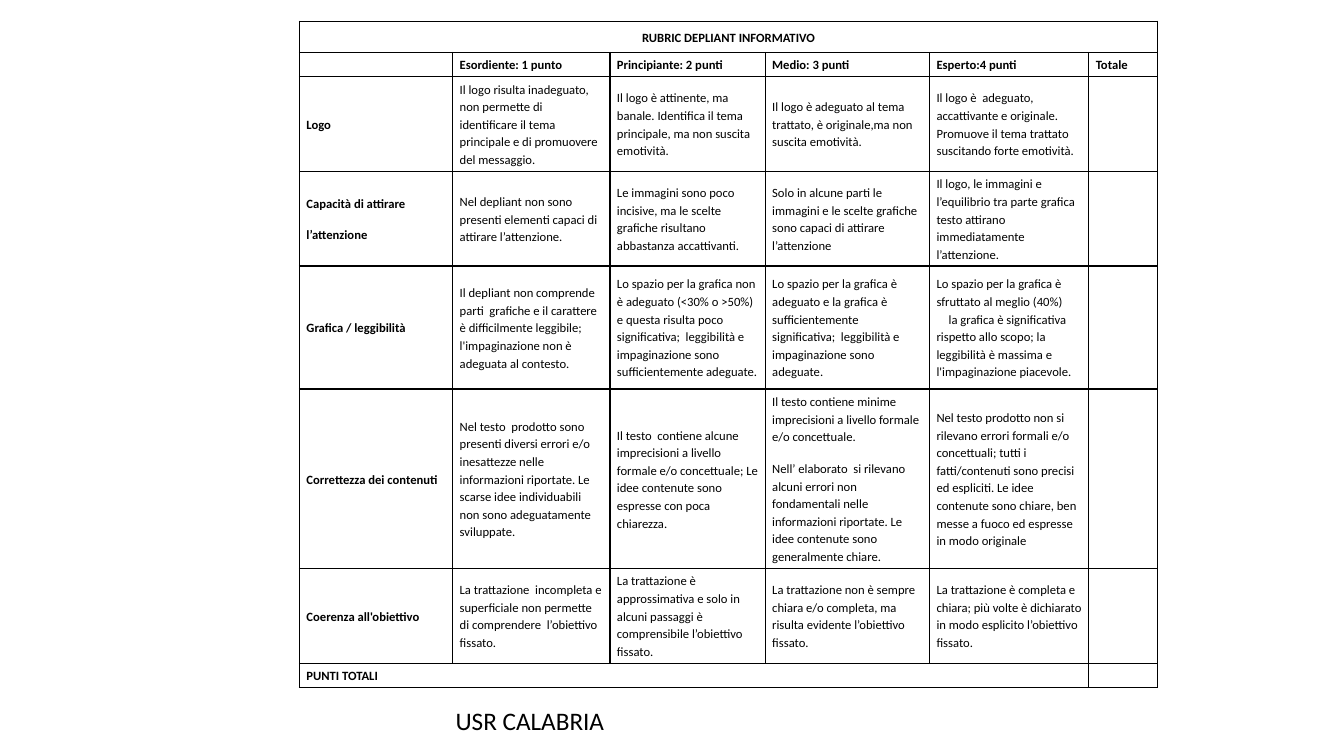
"""Builds the assessment rubric slide for an informative leaflet."""
from dataclasses import dataclass

from lxml import etree
from pptx import Presentation
from pptx.dml.color import RGBColor
from pptx.enum.text import MSO_ANCHOR, PP_ALIGN
from pptx.oxml.ns import qn
from pptx.util import Inches, Pt

MIDDLE = MSO_ANCHOR.MIDDLE
CENTER = PP_ALIGN.CENTER
BLACK = RGBColor(0, 0, 0)
FONT = "Calibri"
RUBRIC_SIZE = Pt(9)
BORDER_WIDTH = Pt(1)
BORDER_SIDES = ("a:lnL", "a:lnR", "a:lnT", "a:lnB")
COLUMN_WIDTHS = (1.52, 1.56, 1.54, 1.63, 1.58, 0.68)
TITLE_HEIGHT = 0.31
SINGLE_LINE_HEIGHT = 0.24


@dataclass(frozen=True)
class Passage:
    """One paragraph of a cell."""
    text: str
    indent: float = 0
    space_after: float = 10


@dataclass(frozen=True)
class Criterion:
    """One assessed aspect with its description at each level."""
    label: tuple[Passage, ...]
    levels: tuple[tuple[Passage, ...], ...]
    height: float


def passages(*texts: str) -> tuple[Passage, ...]:
    """Turn plain texts into regular paragraphs."""
    return tuple(Passage(text) for text in texts)


HEADINGS = ("", "Esordiente: 1 punto", "Principiante: 2 punti", "Medio: 3 punti",
            "Esperto:4 punti", "Totale")

CRITERIA = (
    Criterion(passages("Logo"), (
        passages("Il logo risulta inadeguato, non permette di identificare il tema "
                 "principale e di promuovere del messaggio."),
        passages("Il logo è attinente, ma banale. Identifica il tema principale, "
                 "ma non suscita emotività."),
        passages("Il logo è adeguato al tema trattato, è originale,ma non suscita emotività."),
        passages("Il logo è  adeguato, accattivante e originale. Promuove il tema "
                 "trattato suscitando forte emotività."),
    ), 0.94),
    Criterion(passages("Capacità di attirare", "l’attenzione"), (
        passages("Nel depliant non sono presenti elementi capaci di attirare l’attenzione."),
        passages("Le immagini sono poco incisive, ma le scelte grafiche risultano "
                 "abbastanza accattivanti."),
        passages("Solo in alcune parti le immagini e le scelte grafiche sono capaci "
                 "di attirare l’attenzione"),
        passages("Il logo, le immagini e l’equilibrio tra parte grafica testo attirano "
                 "immediatamente l’attenzione."),
    ), 0.94),
    Criterion(passages("Grafica / leggibilità"), (
        passages("Il depliant non comprende parti  grafiche e il carattere è difficilmente "
                 "leggibile; l'impaginazione non è adeguata al contesto."),
        passages("Lo spazio per la grafica non è adeguato (<30% o >50%) e questa risulta "
                 "poco significativa;  leggibilità e impaginazione sono "
                 "sufficientemente adeguate."),
        passages("Lo spazio per la grafica è adeguato e la grafica è sufficientemente "
                 "significativa;  leggibilità e impaginazione sono adeguate."),
        (Passage("Lo spazio per la grafica è sfruttato al meglio (40%)", space_after=0),
         Passage("la grafica è significativa rispetto allo scopo; la leggibilità è massima "
                 "e l'impaginazione piacevole.", indent=0.12)),
    ), 1.22),
    Criterion(passages("Correttezza dei contenuti"), (
        passages("Nel testo  prodotto sono presenti diversi errori e/o inesattezze nelle "
                 "informazioni riportate. Le scarse idee individuabili non sono "
                 "adeguatamente sviluppate."),
        passages("Il testo  contiene alcune imprecisioni a livello formale e/o concettuale; "
                 "Le idee contenute sono espresse con poca chiarezza."),
        passages("Il testo contiene minime imprecisioni a livello formale e/o concettuale.",
                 "Nell’ elaborato  si rilevano alcuni errori non fondamentali nelle "
                 "informazioni riportate. Le idee contenute sono generalmente chiare."),
        passages("Nel testo prodotto non si rilevano errori formali e/o concettuali; tutti i "
                 "fatti/contenuti sono precisi ed espliciti. Le idee contenute sono chiare, "
                 "ben messe a fuoco ed espresse in modo originale"),
    ), 1.78),
    Criterion(passages("Coerenza all'obiettivo"), (
        passages("La trattazione  incompleta e superficiale non permette di comprendere  "
                 "l’obiettivo fissato."),
        passages("La trattazione è approssimativa e solo in alcuni passaggi è comprensibile "
                 "l’obiettivo fissato."),
        passages("La trattazione non è sempre chiara e/o completa, ma risulta evidente "
                 "l’obiettivo fissato."),
        passages("La trattazione è completa e chiara; più volte è dichiarato in modo "
                 "esplicito l’obiettivo fissato."),
    ), 0.94),
)


def format_run(run, size: int, bold: bool) -> None:
    """Apply the slide's typeface to a run."""
    run.font.name = FONT
    run.font.size = size
    run.font.bold = bold
    run.font.color.rgb = BLACK


def draw_borders(cell) -> None:
    """Give a cell a solid line on every side."""
    properties = cell._tc.get_or_add_tcPr()
    for side in BORDER_SIDES:
        line = etree.SubElement(properties, qn(side), w=str(BORDER_WIDTH))
        fill = etree.SubElement(line, qn("a:solidFill"))
        etree.SubElement(fill, qn("a:srgbClr"), val=str(BLACK))


def fill_cell(cell, content: tuple[Passage, ...], bold: bool) -> None:
    """Write a cell's paragraphs and set its frame."""
    draw_borders(cell)
    cell.fill.background()
    cell.vertical_anchor = MIDDLE
    cell.margin_left = cell.margin_right = Inches(0.07)
    cell.margin_top = cell.margin_bottom = Inches(0.03)
    cell.text_frame.text = "\n".join(passage.text for passage in content)
    for paragraph, passage in zip(cell.text_frame.paragraphs, content):
        paragraph.line_spacing = 1.15
        paragraph.space_after = Pt(passage.space_after)
        if passage.indent:
            paragraph._p.get_or_add_pPr().set("indent", str(Inches(passage.indent)))
        for run in paragraph.runs:
            format_run(run, RUBRIC_SIZE, bold)
        etree.SubElement(paragraph._p, qn("a:endParaRPr"), sz=str(int(RUBRIC_SIZE.pt * 100)))


def draw_rubric(slide) -> None:
    """Draw the rubric table."""
    empty = passages("")
    blanks = len(COLUMN_WIDTHS) - 1
    rows = [
        (passages("RUBRIC DEPLIANT INFORMATIVO"), *[empty] * blanks),
        tuple(passages(heading) for heading in HEADINGS),
        *((criterion.label, *criterion.levels, empty) for criterion in CRITERIA),
        (passages("PUNTI TOTALI"), *[empty] * blanks),
    ]
    heights = [TITLE_HEIGHT, SINGLE_LINE_HEIGHT,
               *(criterion.height for criterion in CRITERIA), SINGLE_LINE_HEIGHT]
    rubric = slide.shapes.add_table(
        len(rows), len(COLUMN_WIDTHS), Inches(2.97), Inches(0.21),
        Inches(sum(COLUMN_WIDTHS)), Inches(sum(heights))).table
    rubric.first_row = rubric.horz_banding = False
    for column, width in zip(rubric.columns, COLUMN_WIDTHS):
        column.width = Inches(width)
    for row_index, (row, height) in enumerate(zip(rows, heights)):
        rubric.rows[row_index].height = Inches(height)
        for column_index, content in enumerate(row):
            fill_cell(rubric.cell(row_index, column_index), content,
                      bold=row_index < 2 or column_index == 0)
    title = rubric.cell(0, 0)
    title.merge(rubric.cell(0, blanks))
    title.text_frame.paragraphs[0].alignment = CENTER
    last_row = len(rows) - 1
    rubric.cell(last_row, 0).merge(rubric.cell(last_row, blanks - 1))


def draw_office(slide) -> None:
    """Write the office name under the rubric."""
    office = slide.shapes.add_textbox(
        Inches(4.42), Inches(6.95), Inches(4.5), Inches(0.4)).text_frame
    office.word_wrap = True
    office.vertical_anchor = MIDDLE
    office.margin_left = office.margin_right = Inches(0.1)
    office.margin_top = office.margin_bottom = Inches(0.1)
    office.text = "USR CALABRIA"
    format_run(office.paragraphs[0].runs[0], Pt(18), False)


def main() -> None:
    """Create and save the presentation."""
    presentation = Presentation()
    presentation.slide_width = Inches(13.33)
    presentation.slide_height = Inches(7.5)
    slide = presentation.slides.add_slide(presentation.slide_layouts[6])
    draw_office(slide)
    draw_rubric(slide)
    presentation.save("out.pptx")


if __name__ == "__main__":
    main()
